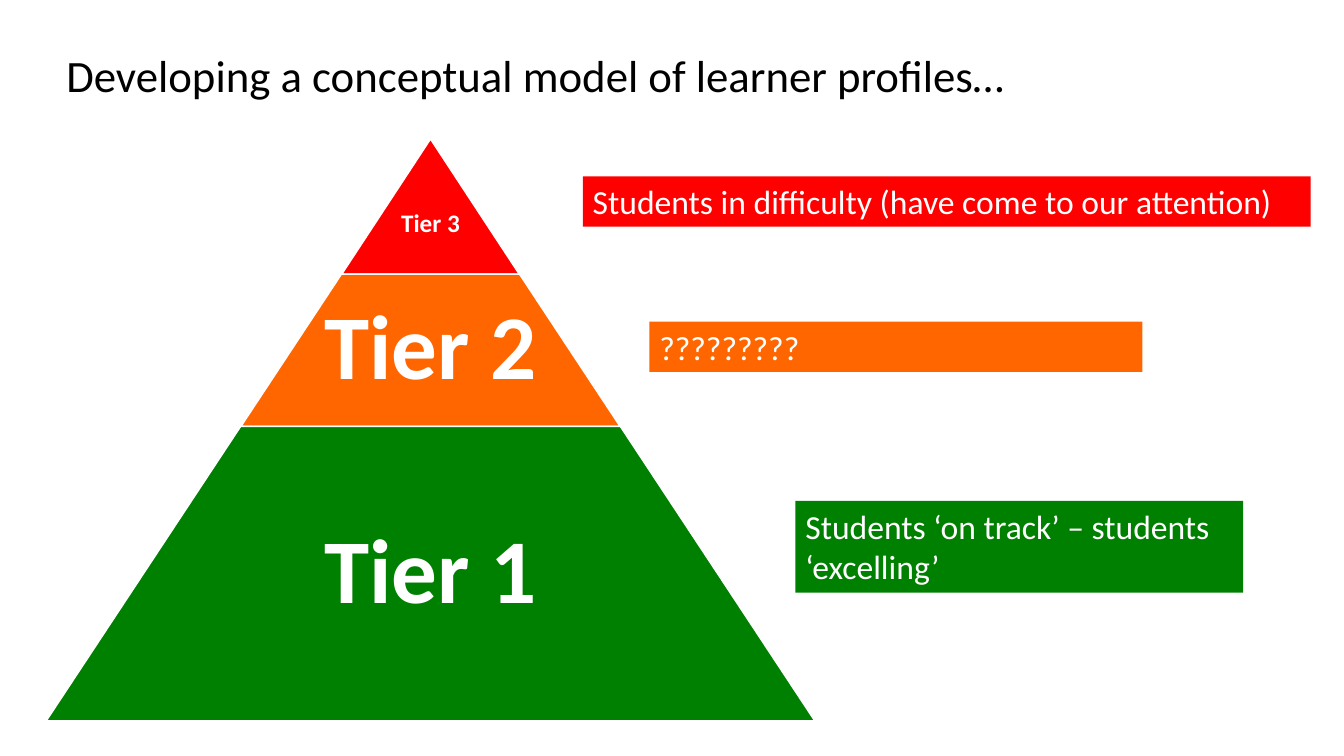
from pptx import Presentation
from pptx.dml.color import RGBColor as RGB
from pptx.enum.shapes import MSO_SHAPE as Shape
from pptx.enum.text import MSO_ANCHOR as Anchor, PP_ALIGN as Align
from pptx.util import Pt

PX = 9144
RED = RGB(255, 0, 0)
ORANGE = RGB(255, 102, 0)
GREEN = RGB(0, 128, 0)
WHITE = RGB(255, 255, 255)
BLACK = RGB(0, 0, 0)

MID, APEX, SLOPE = 427, 138, 0.66
TIERS = [
    ("Tier 3", 18, 272, RED, 18),
    ("Tier 2", 65, 423, ORANGE, 0),
    ("Tier 1", 65, 715, GREEN, 0),
]
NOTES = [
    ("Students in difficulty (have come to our attention)", (578, 175, 722, 50), RED),
    ("?????????", (644, 319, 489, 50), ORANGE),
    ("Students ‘on track’ – students ‘excelling’", (789, 497, 444, 91), GREEN),
]


class Deck:
    font = "Calibri"

    def __init__(self, wide, high):
        self.show = Presentation()
        self.show.slide_width = wide * PX
        self.show.slide_height = high * PX
        self.slide = self.show.slides.add_slide(self.show.slide_layouts[6])

    def label(self, shape, words, size, color, bold=False, align=Align.LEFT):
        frame = shape.text_frame
        frame.word_wrap = True
        para = frame.paragraphs[0]
        para.text = words
        para.alignment = align
        para.font.name = self.font
        para.font.size = Pt(size)
        para.font.bold = bold
        para.font.color.rgb = color
        return frame, para

    def text(self, words, box, size, color, **style):
        shape = self.slide.shapes.add_textbox(*[n * PX for n in box])
        return self.label(shape, words, size, color, **style)

    def block(self, kind, box, fill):
        shape = self.slide.shapes.add_shape(kind, *[n * PX for n in box])
        shape.shadow.inherit = False
        shape.fill.solid()
        shape.fill.fore_color.rgb = fill
        shape.line.fill.background()
        return shape

    def tier(self, words, size, top, base, fill, drop):
        half = round(SLOPE * (base - APEX))
        high = base - top
        box = (MID - half, top, 2 * half, high)
        shape = self.block(Shape.TRAPEZOID, box, fill)
        shape.adjustments[0] = SLOPE
        shape.line.color.rgb = WHITE
        shape.line.width = Pt(1)
        place = (MID - half, top + drop, 2 * half, high)
        frame, para = self.text(words, place, size, WHITE, bold=True, align=Align.CENTER)
        frame.vertical_anchor = Anchor.MIDDLE
        para.line_spacing = 0.9

    def note(self, words, box, fill):
        shape = self.block(Shape.RECTANGLE, box, fill)
        frame, _ = self.label(shape, words, 24, WHITE)
        frame.vertical_anchor = Anchor.TOP


def main():
    deck = Deck(1333, 750)
    title = "Developing a conceptual model of learner profiles…"
    deck.text(title, (56, 42, 1144, 64), 32, BLACK)
    top = APEX
    for words, size, base, fill, drop in TIERS:
        deck.tier(words, size, top, base, fill, drop)
        top = base
    for words, box, fill in NOTES:
        deck.note(words, box, fill)
    deck.show.save("out.pptx")


if __name__ == "__main__":
    main()
